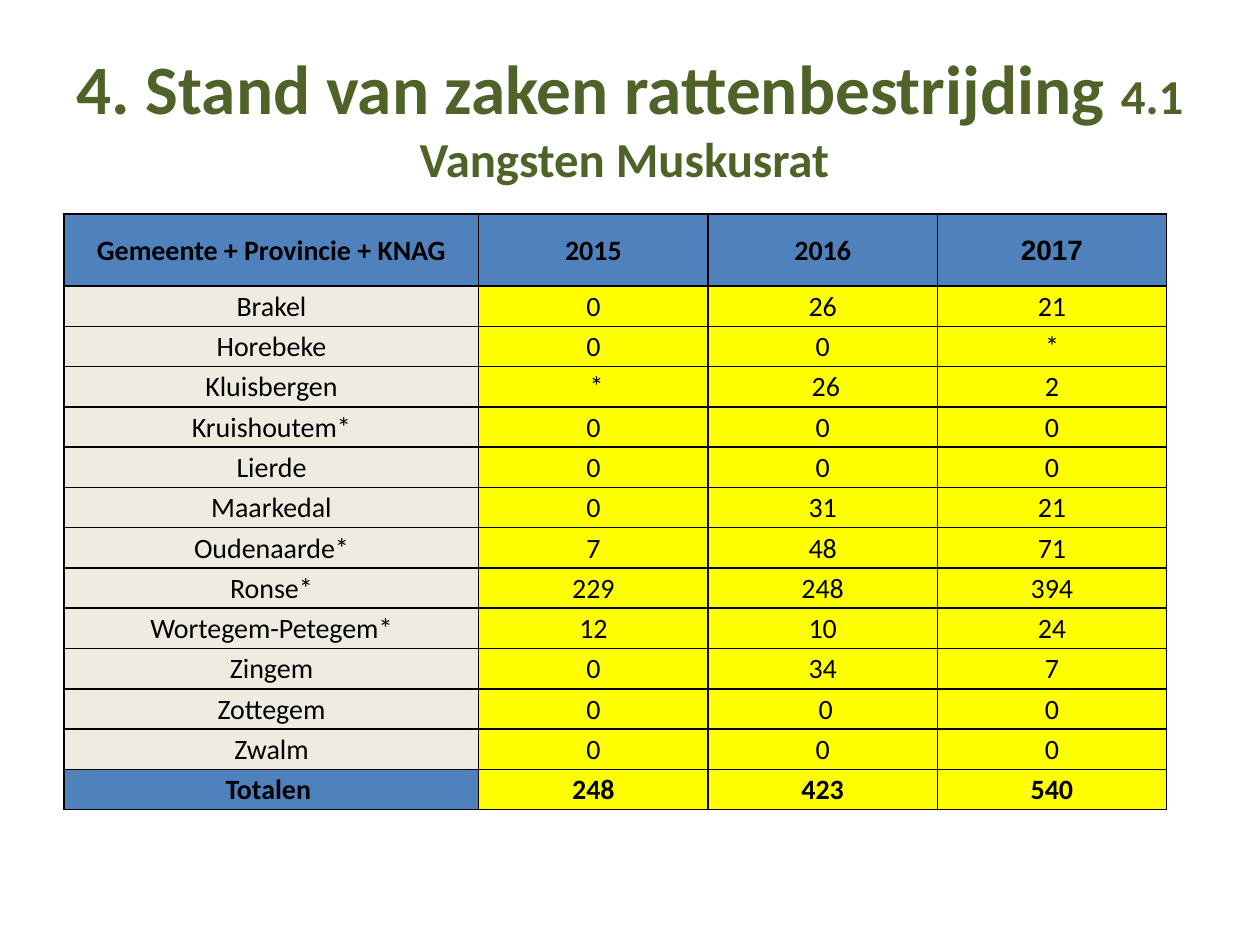
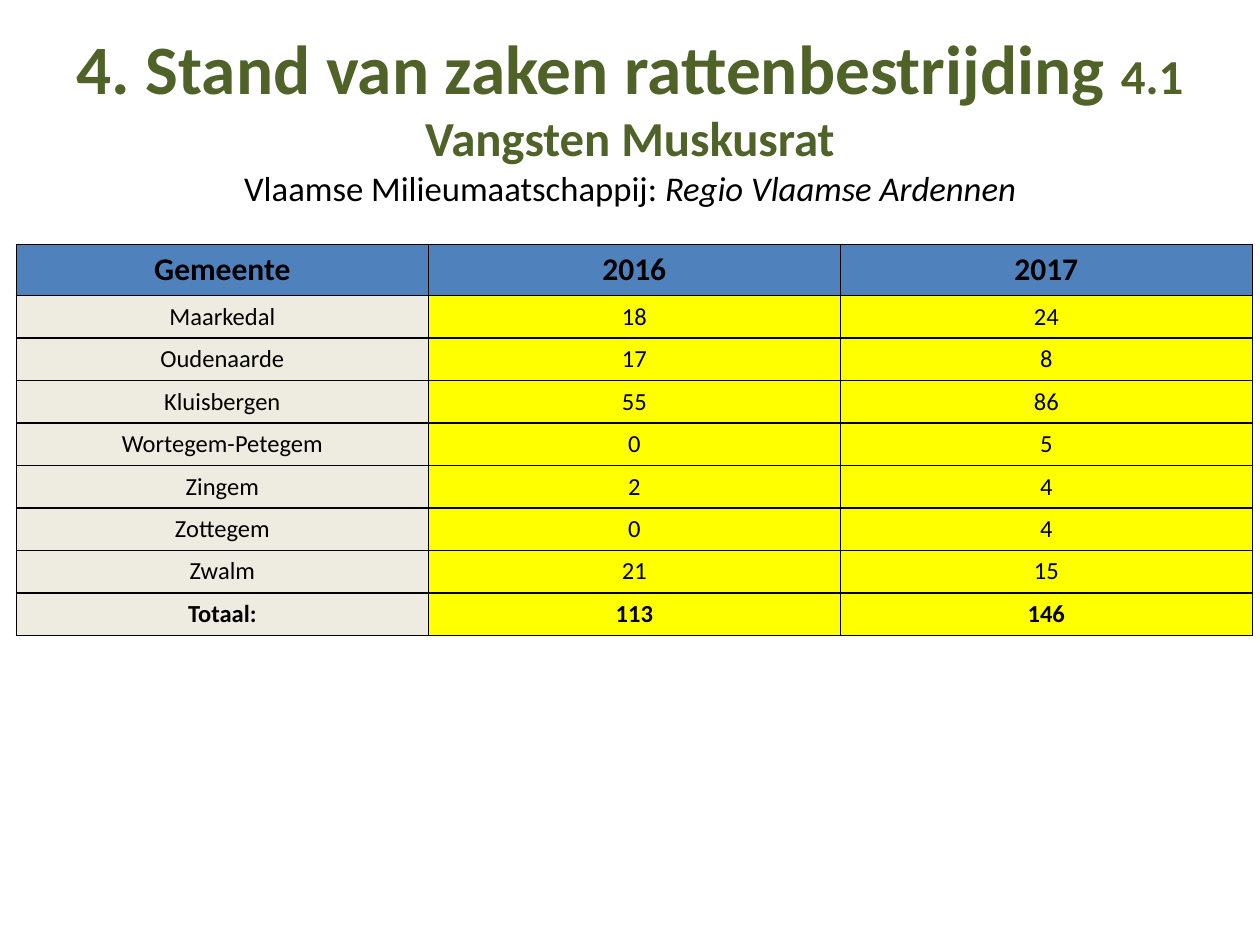
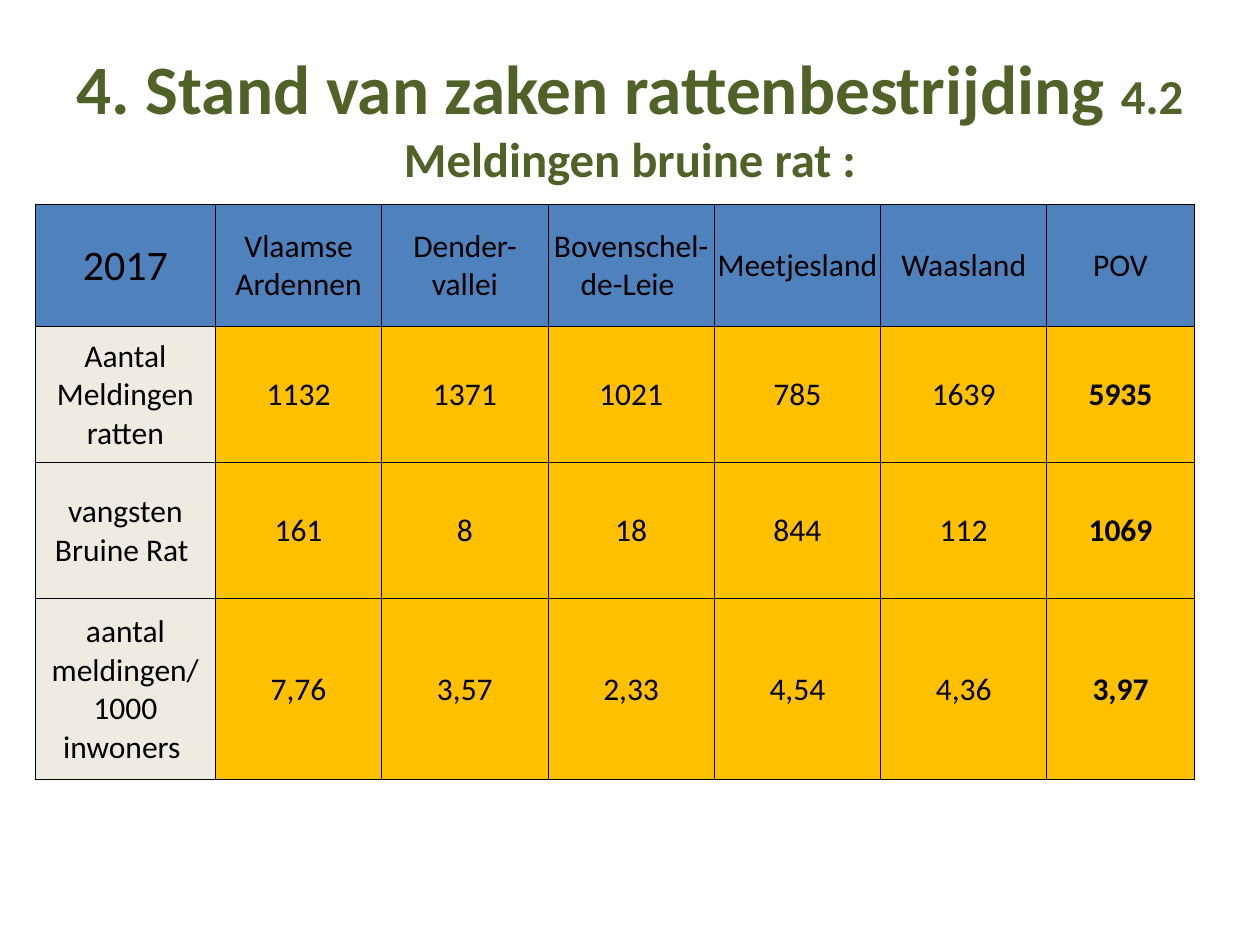
"""Build three slides with tables on rat control in the Flemish Ardennes."""
from dataclasses import dataclass, field

import lxml.etree
import pptx
import pptx.dml.color
import pptx.enum.text
import pptx.oxml.ns
import pptx.slide
import pptx.table
import pptx.text.text
import pptx.util
from pptx.util import Inches

FONT = "Calibri"
BLACK, GREEN, BLUE = "000000", "4F6228", "4F81BD"
BEIGE, YELLOW, ORANGE = "EEECE1", "FFFF00", "FFC000"
HEADING = "4. Stand van zaken rattenbestrijding "


@dataclass
class TextRun:
    text: str
    size: float
    color: str = GREEN
    bold: bool = True
    italic: bool = False


@dataclass
class CellStyle:
    fill: str
    size: float
    bold: bool = False
    font: str = FONT


@dataclass
class TableSpec:
    left: float
    top: float
    widths: list[float]
    heights: list[float]
    rows: list[list[str]]
    value_fill: str
    text_size: float
    header_size: float
    border: float = 1
    tight: bool = True
    bold_header: bool = True
    bold_last_row: bool = True
    bold_last_column: bool = False
    special: dict[tuple[int, int], CellStyle] = field(default_factory=dict)

    def style(self, row: int, column: int) -> CellStyle:
        """Return the style of a cell from its place in the table."""
        if (row, column) in self.special:
            return self.special[row, column]
        if row == 0:
            return CellStyle(BLUE, self.header_size, self.bold_header)
        bold = (self.bold_last_row and row == len(self.heights) - 1) or (
            self.bold_last_column and column == len(self.widths) - 1)
        return CellStyle(self.value_fill if column else BEIGE, self.text_size, bold)


@dataclass
class SlideSpec:
    title_lines: list[list[TextRun]]
    table: TableSpec


def rgb(color: str) -> pptx.dml.color.RGBColor:
    """Convert a hex string to a colour."""
    return pptx.dml.color.RGBColor.from_string(color)


def heading(subject: str) -> list[TextRun]:
    """Return the shared heading followed by the subject of the slide."""
    return [TextRun(HEADING, 39.6), TextRun(subject, 27.9)]


def write_title(slide: pptx.slide.Slide, lines: list[list[TextRun]]) -> None:
    """Place the title placeholder and fill it with formatted lines."""
    title = slide.shapes.title
    title.left, title.top = Inches(0.5), Inches(0.3)
    title.width, title.height = Inches(9), Inches(1.25)
    frame = title.text_frame
    frame.word_wrap = True
    frame.auto_size = pptx.enum.text.MSO_AUTO_SIZE.NONE
    frame.vertical_anchor = pptx.enum.text.MSO_ANCHOR.MIDDLE
    paragraph = frame.paragraphs[0]
    paragraph.alignment = pptx.enum.text.PP_ALIGN.CENTER
    paragraph.font.name = FONT
    for index, line in enumerate(lines):
        if index:
            paragraph.add_line_break()
        for item in line:
            run = paragraph.add_run()
            run.text = item.text
            run.font.size = pptx.util.Pt(item.size)
            run.font.bold, run.font.italic = item.bold, item.italic
            run.font.color.rgb = rgb(item.color)


def add_borders(cell: pptx.table._Cell, width: float) -> None:
    """Draw black lines on the four sides of a cell."""
    properties = cell._tc.get_or_add_tcPr()
    qualified = pptx.oxml.ns.qn
    for side in ("lnL", "lnR", "lnT", "lnB"):
        line = lxml.etree.SubElement(properties, qualified(f"a:{side}"), w=str(pptx.util.Pt(width)))
        fill = lxml.etree.SubElement(line, qualified("a:solidFill"))
        lxml.etree.SubElement(fill, qualified("a:srgbClr"), val=BLACK)


def write_cell(cell: pptx.table._Cell, text: str, style: CellStyle, table: TableSpec) -> None:
    """Fill, outline and letter one cell."""
    add_borders(cell, table.border)
    cell.fill.solid()
    cell.fill.fore_color.rgb = rgb(style.fill)
    if table.tight:
        cell.margin_left = cell.margin_right = cell.margin_top = Inches(0.01)
        cell.margin_bottom = 0
        cell.vertical_anchor = pptx.enum.text.MSO_ANCHOR.MIDDLE
    cell.text = text
    paragraph = cell.text_frame.paragraphs[0]
    paragraph.alignment = pptx.enum.text.PP_ALIGN.CENTER
    paragraph.font.name = style.font
    paragraph.font.size = pptx.util.Pt(style.size)
    paragraph.font.bold = style.bold
    paragraph.font.color.rgb = rgb(BLACK)


def draw_table(slide: pptx.slide.Slide, spec: TableSpec) -> None:
    """Add a table and write all its cells."""
    table = slide.shapes.add_table(
        len(spec.heights), len(spec.widths), Inches(spec.left), Inches(spec.top),
        Inches(sum(spec.widths)), Inches(sum(spec.heights))).table
    table.first_row = table.horz_banding = False
    for column, width in zip(table.columns, spec.widths):
        column.width = Inches(width)
    for row, height in zip(table.rows, spec.heights):
        row.height = Inches(height)
    for row_index, texts in enumerate(spec.rows):
        for column_index, text in enumerate(texts):
            style = spec.style(row_index, column_index)
            write_cell(table.cell(row_index, column_index), text, style, spec)


MUSKRAT_CATCHES = TableSpec(
    0.51, 1.7, [3.29] + [1.82] * 3, [0.57] + [0.32] * 13,
    [
        ["Gemeente + Provincie + KNAG", "2015", "2016", "2017"],
        ["Brakel", "0", "26", "21"],
        ["Horebeke", "0", "0", "*"],
        ["Kluisbergen", " *", " 26", "2"],
        ["Kruishoutem*", "0", "0", "0"],
        ["Lierde", "0", "0", "0"],
        ["Maarkedal", "0", "31", "21"],
        ["Oudenaarde*", "7", "48", "71"],
        ["Ronse*", "229", "248", "394"],
        ["Wortegem-Petegem*", "12", "10", "24"],
        ["Zingem", "0", "34", "7"],
        ["Zottegem", "0", " 0", "0"],
        ["Zwalm", "0", "0", "0"],
        ["Totalen ", "248", "423", "540"],
    ],
    YELLOW, text_size=16, header_size=16,
    special={(0, 3): CellStyle(BLUE, 16, True, "Arial"), (13, 0): CellStyle(BLUE, 16, True)},
)

REGIONAL_CATCHES = TableSpec(
    0.13, 1.94, [3.27] * 3, [0.4] + [0.33] * 8,
    [
        ["Gemeente", "2016", "2017"],
        ["Maarkedal", "18", "24"],
        ["Oudenaarde", "17", "8"],
        ["Kluisbergen", "55", "86"],
        ["Wortegem-Petegem", "0", "5"],
        ["Zingem", "2", "4"],
        ["Zottegem", "0", "4"],
        ["Zwalm", "21", "15"],
        ["Totaal:", "113", "146"],
    ],
    YELLOW, text_size=14, header_size=18, tight=False,
)

BROWN_RAT_REPORTS = TableSpec(
    0.28, 1.62, [1.43] + [1.32] * 5 + [1.17], [0.97, 1.08, 1.08, 1.44],
    [
        ["2017", "Vlaamse Ardennen", "Dender-vallei", "Bovenschel-de-Leie ", "Meetjesland",
         "Waasland", "POV"],
        ["Aantal Meldingen ratten", "1132", "1371", "1021", "785", "1639", "5935"],
        ["vangsten Bruine Rat ", "161", "8", "18", "844", "112", "1069"],
        ["aantal meldingen/ 1000 inwoners ", "7,76", "3,57", "2,33", "4,54", "4,36", "3,97"],
    ],
    ORANGE, text_size=18, header_size=18, border=0.5, bold_header=False,
    bold_last_row=False, bold_last_column=True, special={(0, 0): CellStyle(BLUE, 24)},
)

SLIDES = [
    SlideSpec([heading("4.1 Vangsten Muskusrat ")], MUSKRAT_CATCHES),
    SlideSpec(
        [
            heading("4.1 Vangsten Muskusrat"),
            [TextRun("Vlaamse Milieumaatschappij: ", 19.8, BLACK, False),
             TextRun("Regio Vlaamse Ardennen", 19.8, BLACK, False, True)],
        ],
        REGIONAL_CATCHES,
    ),
    SlideSpec([heading("4.2 Meldingen bruine rat :")], BROWN_RAT_REPORTS),
]


def main() -> None:
    """Build and save the presentation."""
    presentation = pptx.Presentation()
    presentation.slide_width, presentation.slide_height = Inches(10), Inches(7.5)
    title_only = presentation.slide_layouts.get_by_name("Title Only")
    for spec in SLIDES:
        slide = presentation.slides.add_slide(title_only)
        write_title(slide, spec.title_lines)
        draw_table(slide, spec.table)
    presentation.save("out.pptx")


if __name__ == "__main__":
    main()
